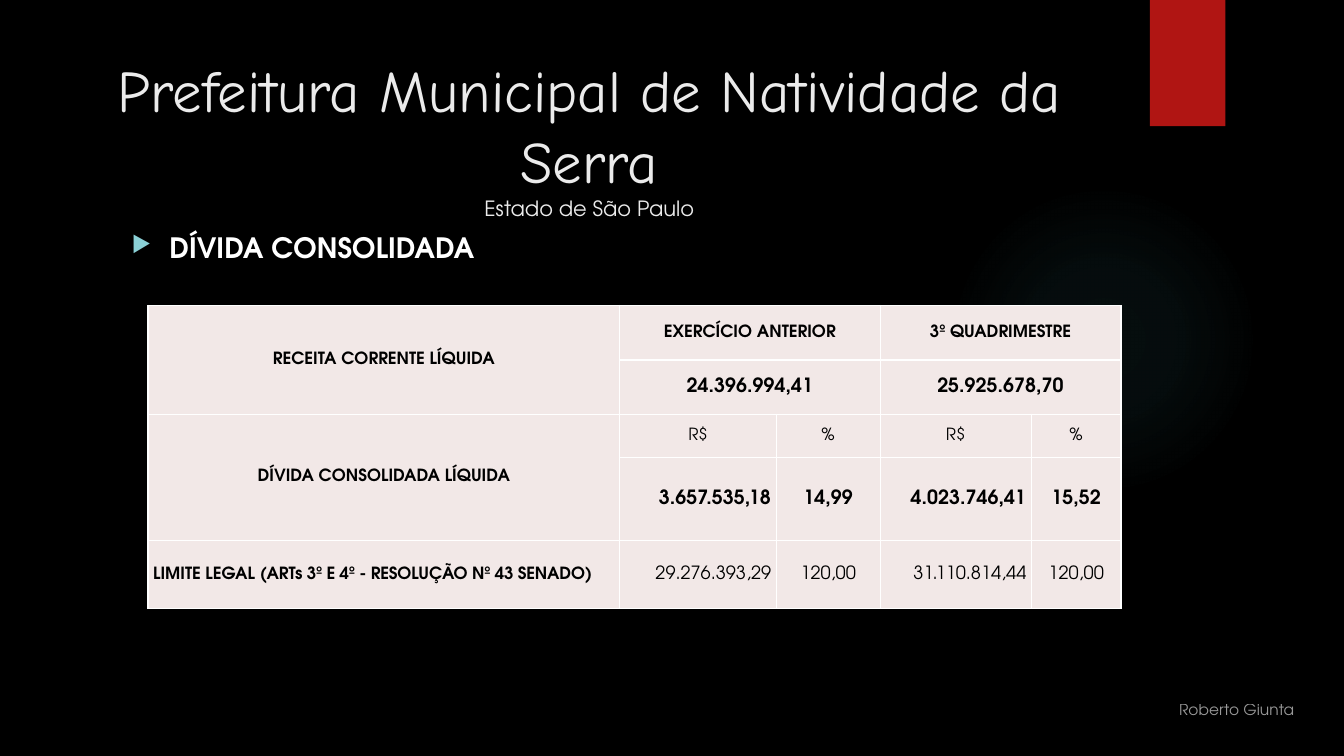
import pptx
import pptx.dml.color
import pptx.enum.shapes
import pptx.enum.text
import pptx.oxml
import pptx.oxml.ns
import pptx.util
from lxml import etree

Cm = pptx.util.Cm
Pt = pptx.util.Pt
ALIGN = pptx.enum.text.PP_ALIGN
ANCHOR = pptx.enum.text.MSO_ANCHOR
SHAPE = pptx.enum.shapes.MSO_SHAPE
qn = pptx.oxml.ns.qn

COLOURS = {
    "background": "000000",
    "glow": "50B9C1",
    "ribbon": "B01513",
    "title": "EBEBEB",
    "bullet": "8AD0D6",
    "white": "FFFFFF",
    "cell": "F2E8E7",
    "ink": "000000",
}
BODY_FONT = "TeX Gyre Adventor"
TITLE_FONT = "Comic Neue"

COLUMN_WIDTHS = [11.89, 3.94, 2.62, 3.81, 2.26]
ROW_HEIGHTS = [1.37, 1.37, 1.09, 2.08, 1.73]
# Row, column, rows spanned, columns spanned
MERGES = [(0, 0, 2, 1), (0, 1, 1, 2), (0, 3, 1, 2),
          (1, 1, 1, 2), (1, 3, 1, 2), (2, 0, 2, 1)]
# Each row: size of the figures, bold figures, texts
DEBT_ROWS = [
    (12, True, ["RECEITA CORRENTE LÍQUIDA", "EXERCÍCIO ANTERIOR", "",
                "3º QUADRIMESTRE", ""]),
    (14, True, ["", "24.396.994,41", "", "25.925.678,70", ""]),
    (12, False, ["DÍVIDA CONSOLIDADA LÍQUIDA", "R$", "%", "R$", "%"]),
    (14, True, ["", "3.657.535,18", "14,99", "4.023.746,41", "15,52"]),
    (13, False, ["", "29.276.393,29", "120,00", "31.110.814,44", "120,00"]),
]
LIMIT_LABEL = ["LIMITE LEGAL ", "(ARTs 3º E 4º - RESOLUÇÃO Nº 43 SENADO)"]


def rgb(name):
    return pptx.dml.color.RGBColor.from_string(COLOURS[name])


def style_font(font, size, colour, bold=False, name=BODY_FONT):
    font.size = Pt(size)
    font.name = name
    font.bold = bold
    font.color.rgb = rgb(colour)


def add_plain_shape(page, kind, left, top, width, height, colour):
    shape = page.shapes.add_shape(kind, Cm(left), Cm(top), Cm(width), Cm(height))
    shape.shadow.inherit = False
    shape.line.fill.background()
    shape.fill.solid()
    shape.fill.fore_color.rgb = rgb(colour)
    return shape


def add_glow(page):
    glow = add_plain_shape(page, SHAPE.OVAL, 23.9, 4.65, 7.82, 7.82, "glow")
    stops = "".join(
        f'<a:gs pos="{place * 1000}"><a:srgbClr val="{COLOURS["glow"]}">'
        f'<a:alpha val="{alpha * 1000}"/></a:srgbClr></a:gs>'
        for place, alpha in [(0, 7), (36, 6), (69, 0)])
    gradient = pptx.oxml.parse_xml(
        f'<a:gradFill {pptx.oxml.ns.nsdecls("a")}><a:gsLst>{stops}</a:gsLst>'
        '<a:path path="circle"><a:fillToRect l="50000" t="50000" r="50000" b="50000"/>'
        '</a:path></a:gradFill>')
    properties = glow._element.spPr
    properties.replace(properties.find(qn("a:solidFill")), gradient)


def add_text_box(page, left, top, width, height, anchor=ANCHOR.TOP):
    box = page.shapes.add_textbox(Cm(left), Cm(top), Cm(width), Cm(height))
    box.text_frame.word_wrap = True
    box.text_frame.vertical_anchor = anchor
    return box.text_frame.paragraphs[0]


def add_title(page):
    para = add_text_box(page, 1.8, 1.24, 26.11, 3.89)
    para.alignment = ALIGN.CENTER
    town = para.add_run()
    town.text = "Prefeitura Municipal de Natividade da Serra"
    style_font(town.font, 42, "title", name=TITLE_FONT)
    para.add_line_break()
    state = para.add_run()
    state.text = "Estado de São Paulo"
    style_font(state.font, 15, "title")


def add_heading(page):
    para = add_text_box(page, 3.07, 5.69, 25.5, 11.66)
    para.text = "DÍVIDA CONSOLIDADA"
    layout = para._p.get_or_add_pPr()
    layout.set("marL", str(Cm(0.95)))
    layout.set("indent", str(Cm(-0.95)))
    colour = etree.SubElement(layout, qn("a:buClr"))
    etree.SubElement(colour, qn("a:srgbClr"), val=COLOURS["bullet"])
    etree.SubElement(layout, qn("a:buSzPct"), val="80000")
    etree.SubElement(layout, qn("a:buChar"), char="▶")
    style_font(para.font, 20, "white", bold=True)


def add_author(page):
    para = add_text_box(page, 22.15, 17.4, 10.72, 0.84, ANCHOR.BOTTOM)
    para.text = "Roberto Giunta"
    para.alignment = ALIGN.RIGHT
    style_font(para.font, 11, "white")
    colour = para.font._element.find(".//" + qn("a:srgbClr"))
    etree.SubElement(colour, qn("a:alpha"), val="60000")


def style_cell(cell):
    cell.margin_left = cell.margin_right = Cm(0.13)
    cell.margin_top = cell.margin_bottom = 0
    cell.vertical_anchor = ANCHOR.MIDDLE
    properties = cell._tc.get_or_add_tcPr()
    for side in ("a:lnL", "a:lnR", "a:lnT", "a:lnB"):
        border = etree.SubElement(properties, qn(side), w=str(Pt(1)))
        fill = etree.SubElement(border, qn("a:solidFill"))
        etree.SubElement(fill, qn("a:srgbClr"), val=COLOURS["white"])
    cell.fill.solid()
    cell.fill.fore_color.rgb = rgb("cell")


def add_debt_table(page):
    frame = page.shapes.add_table(
        len(ROW_HEIGHTS), len(COLUMN_WIDTHS), Cm(3.73), Cm(7.7),
        Cm(sum(COLUMN_WIDTHS)), Cm(sum(ROW_HEIGHTS)))
    table = frame.table
    for column, width in zip(table.columns, COLUMN_WIDTHS):
        column.width = Cm(width)
    for row, height in zip(table.rows, ROW_HEIGHTS):
        row.height = Cm(height)

    for r, (size, bold, texts) in enumerate(DEBT_ROWS):
        for c, text in enumerate(texts):
            cell = table.cell(r, c)
            style_cell(cell)
            para = cell.text_frame.paragraphs[0]
            para.text = text
            # Amounts in the lower rows line up on the right
            amount = r >= 3 and c in (1, 3)
            para.alignment = ALIGN.RIGHT if amount else ALIGN.CENTER
            if c == 0:
                style_font(para.font, 12, "ink", bold=True)
            else:
                style_font(para.font, size, "ink", bold)

    # Label of the legal limit, its second part slightly tightened
    para = table.cell(4, 0).text_frame.paragraphs[0]
    para.alignment = ALIGN.LEFT
    for text in LIMIT_LABEL:
        span = para.add_run()
        span.text = text
    span.font._element.set("spc", "-10")

    for r, c, rows, columns in MERGES:
        table.cell(r, c).merge(table.cell(r + rows - 1, c + columns - 1))


def main():
    deck = pptx.Presentation()
    deck.slide_width, deck.slide_height = Cm(33.87), Cm(19.05)
    page = deck.slides.add_slide(deck.slide_layouts[6])
    page.background.fill.solid()
    page.background.fill.fore_color.rgb = rgb("background")

    # Decoration
    add_glow(page)
    add_plain_shape(page, SHAPE.RECTANGLE, 28.98, 0, 1.9, 3.18, "ribbon")

    # Content
    add_heading(page)
    add_debt_table(page)
    add_author(page)
    add_title(page)
    deck.save("out.pptx")


if __name__ == "__main__":
    main()
